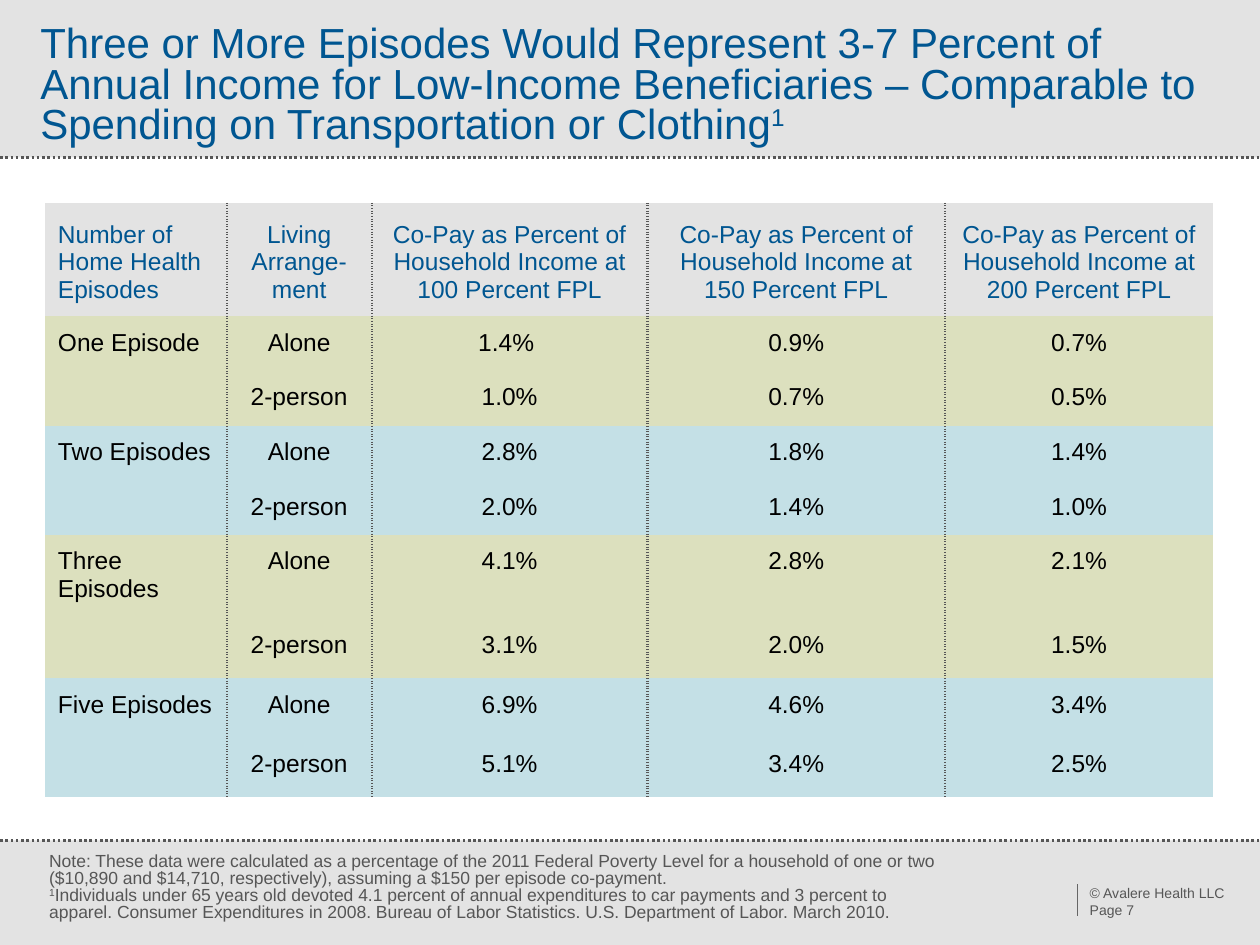
import pptx
import pptx.dml.color
import pptx.enum.dml
import pptx.enum.shapes
import pptx.enum.text
import pptx.oxml
import pptx.oxml.ns
import pptx.util
from lxml import etree

WIDTH, HEIGHT = pptx.util.Inches(10), pptx.util.Inches(7.5)
COLUMNS, ROWS = 100, 75
BAND, GREEN, TEAL = "E3E3E3", "DCE0BE", "C4E0E6"
BLUE, BLACK, GRAY = "005691", "000000", "565656"
HEADER_BOTTOM, FOOTER_TOP = 12.5, 66.7
CENTER = pptx.enum.text.PP_ALIGN.CENTER
LEFT = pptx.enum.text.PP_ALIGN.LEFT

TITLE = ("Three or More Episodes Would Represent 3-7 Percent of Annual Income for Low-Income "
         "Beneficiaries – Comparable to Spending on Transportation or Clothing")
NOTE = ("Note: These data were calculated as a percentage of the 2011 Federal Poverty Level for a "
        "household of one or two ($10,890 and $14,710, respectively), assuming a $150 per episode "
        "co-payment.")
FOOTNOTE = ("Individuals under 65 years old devoted 4.1 percent of annual expenditures to car payments "
            "and 3 percent to apparel. Consumer Expenditures in 2008. Bureau of Labor Statistics. "
            "U.S. Department of Labor. March 2010.")

COLUMN_WIDTHS = [14.4, 11.5, 21.9, 23.6, 21.3]
ROW_HEIGHTS = [8.8, 4.2, 4.2, 4.2, 4.2, 6.5, 4.7, 4.7, 4.7]
HEADINGS = ["Number of Home Health Episodes", "Living Arrange-ment"] + [
    f"Co-Pay as Percent of Household Income at {level} Percent FPL" for level in (100, 150, 200)]
EPISODES = [
    ("One Episode", ["1.4% ", "0.9%", "0.7%"], ["1.0%", "0.7%", "0.5%"]),
    ("Two Episodes", ["2.8%", "1.8%", "1.4%"], ["2.0%", "1.4%", "1.0%"]),
    ("Three Episodes", ["4.1%", "2.8%", "2.1%"], ["3.1%", "2.0%", "1.5%"]),
    ("Five Episodes", ["6.9%", "4.6%", "3.4%"], ["5.1%", "3.4%", "2.5%"]),
]


def color(value):
    """Turn a hex string into a colour."""
    return pptx.dml.color.RGBColor.from_string(value)


def across(columns):
    """Return the length of a number of grid columns."""
    return round(WIDTH * columns / COLUMNS)


def down(rows):
    """Return the length of a number of grid rows."""
    return round(HEIGHT * rows / ROWS)


def place(left, top, width, height):
    """Return a grid area as slide lengths."""
    return across(left), down(top), across(width), down(height)


def apply(target, values):
    """Set each attribute named in a dict of format values."""
    for name, value in values.items():
        setattr(target, name, value)


def add_band(slide, top, height):
    """Add a plain band over the full slide width."""
    shape = slide.shapes.add_shape(
        pptx.enum.shapes.MSO_SHAPE.RECTANGLE, *place(0, top, COLUMNS, height))
    shape.shadow.inherit = False
    shape.fill.solid()
    shape.fill.fore_color.rgb = color(BAND)
    shape.line.fill.background()


def add_rule(slide, start, end, hex_color, points, dash=None):
    """Add a straight line between two grid points."""
    rule = slide.shapes.add_connector(
        pptx.enum.shapes.MSO_CONNECTOR.STRAIGHT,
        across(start[0]), down(start[1]), across(end[0]), down(end[1]))
    rule.line.color.rgb = color(hex_color)
    apply(rule.line, {"width": pptx.util.Pt(points), "dash_style": dash})
    etree.SubElement(rule._element.spPr, pptx.oxml.ns.qn("a:effectLst"))


def add_run(paragraph, text, size, hex_color, raised=False):
    """Add a run of text, raised if it is a note mark."""
    run = paragraph.add_run()
    run.text = text
    apply(run.font, {"name": "Arial", "size": pptx.util.Pt(size)})
    run.font.color.rgb = color(hex_color)
    if raised:
        run._r.get_or_add_rPr().set("baseline", "30000")


def add_text(slide, area, size, hex_color, paragraphs, spacing=None, insets=(0, 0, 0, 0)):
    """Add a wrapped text box from paragraphs of (text, raised) runs."""
    frame = slide.shapes.add_textbox(*place(*area)).text_frame
    sides = ("margin_left", "margin_top", "margin_right", "margin_bottom")
    apply(frame, dict(zip(sides, map(pptx.util.Inches, insets))))
    frame.word_wrap = True
    for index, runs in enumerate(paragraphs):
        paragraph = frame.add_paragraph() if index else frame.paragraphs[0]
        paragraph.line_spacing = spacing
        for text, raised in runs:
            for number, line in enumerate(text.split("\n")):
                if number:
                    paragraph.add_line_break()
                add_run(paragraph, line, size, hex_color, raised)


def add_borders(cell, dotted):
    """Draw dotted borders on the named sides and clear the others."""
    properties = cell._tc.get_or_add_tcPr()
    for side in "LRTB":
        paint = (f'<a:solidFill><a:srgbClr val="{GRAY}"/></a:solidFill><a:prstDash val="sysDot"/>'
                 if side in dotted else "<a:noFill/>")
        properties.append(pptx.oxml.parse_xml(
            f'<a:ln{side} {pptx.oxml.ns.nsdecls("a")} w="{pptx.util.Pt(1.5)}">{paint}</a:ln{side}>'))


def fill_cell(cell, text, hex_color, background, alignment, anchor, dotted):
    """Write and format one table cell."""
    margin = pptx.util.Inches(0.1)
    apply(cell, {"margin_left": margin, "margin_right": margin, "margin_top": margin,
                 "margin_bottom": margin, "vertical_anchor": anchor})
    add_borders(cell, dotted)
    cell.fill.solid()
    cell.fill.fore_color.rgb = color(background)
    paragraph = cell.text_frame.paragraphs[0]
    paragraph.alignment = alignment
    if text:
        add_run(paragraph, text, 14, hex_color)
    else:
        etree.SubElement(paragraph._p, pptx.oxml.ns.qn("a:endParaRPr"), sz="1400")


def table_rows():
    """Yield the texts, text colour, fill and anchor of each table row."""
    anchors = pptx.enum.text.MSO_ANCHOR
    yield HEADINGS, BLUE, BAND, anchors.BOTTOM
    for index, (label, alone, pair) in enumerate(EPISODES):
        background = (GREEN, TEAL)[index % 2]
        yield [label, "Alone"] + alone, BLACK, background, anchors.TOP
        yield ["", "2-person"] + pair, BLACK, background, anchors.TOP


def add_copay_table(slide):
    """Add the table of co-pay shares by number of episodes."""
    area = place(3.6, 16.1, sum(COLUMN_WIDTHS), sum(ROW_HEIGHTS))
    table = slide.shapes.add_table(len(ROW_HEIGHTS), len(COLUMN_WIDTHS), *area).table
    for column, width in zip(table.columns, COLUMN_WIDTHS):
        column.width = across(width)
    for row, height in zip(table.rows, ROW_HEIGHTS):
        row.height = down(height)
    last = len(COLUMN_WIDTHS) - 1
    for row, (texts, hex_color, background, anchor) in zip(table.rows, table_rows()):
        for index, (cell, text) in enumerate(zip(row.cells, texts)):
            dotted = ("L" if index else "") + ("R" if index < last else "")
            alignment = CENTER if index else LEFT
            fill_cell(cell, text, hex_color, background, alignment, anchor, dotted)


def main():
    """Build the slide and save it."""
    presentation = pptx.Presentation()
    apply(presentation, {"slide_width": WIDTH, "slide_height": HEIGHT})
    slide = presentation.slides.add_slide(presentation.slide_layouts[6])
    add_band(slide, 0, HEADER_BOTTOM)
    add_band(slide, FOOTER_TOP, ROWS - FOOTER_TOP)
    for row in (FOOTER_TOP, HEADER_BOTTOM):
        add_rule(slide, (0, row), (COLUMNS, row), GRAY, 1.5,
                 pptx.enum.dml.MSO_LINE.ROUND_DOT)
    add_rule(slide, (85.5, 70.2), (85.5, 72.7), "666666", 0.5)
    add_text(slide, (85.5, 70.2, 13.3, 3.2), 8, GRAY,
             [[("© Avalere Health LLC\nPage 7", False)]], insets=(0.1, 0, 0.1, 0.05))
    add_text(slide, (3.2, 2.1, 93.3, 9.8), 24, BLUE, [[(TITLE, False), ("1", True)]], 0.8)
    add_copay_table(slide)
    add_text(slide, (3.9, 67.8, 70.8, 5.4), 10, GRAY,
             [[(NOTE, False)], [("1", True), (FOOTNOTE, False)]], 0.8)
    presentation.save("out.pptx")


if __name__ == "__main__":
    main()
